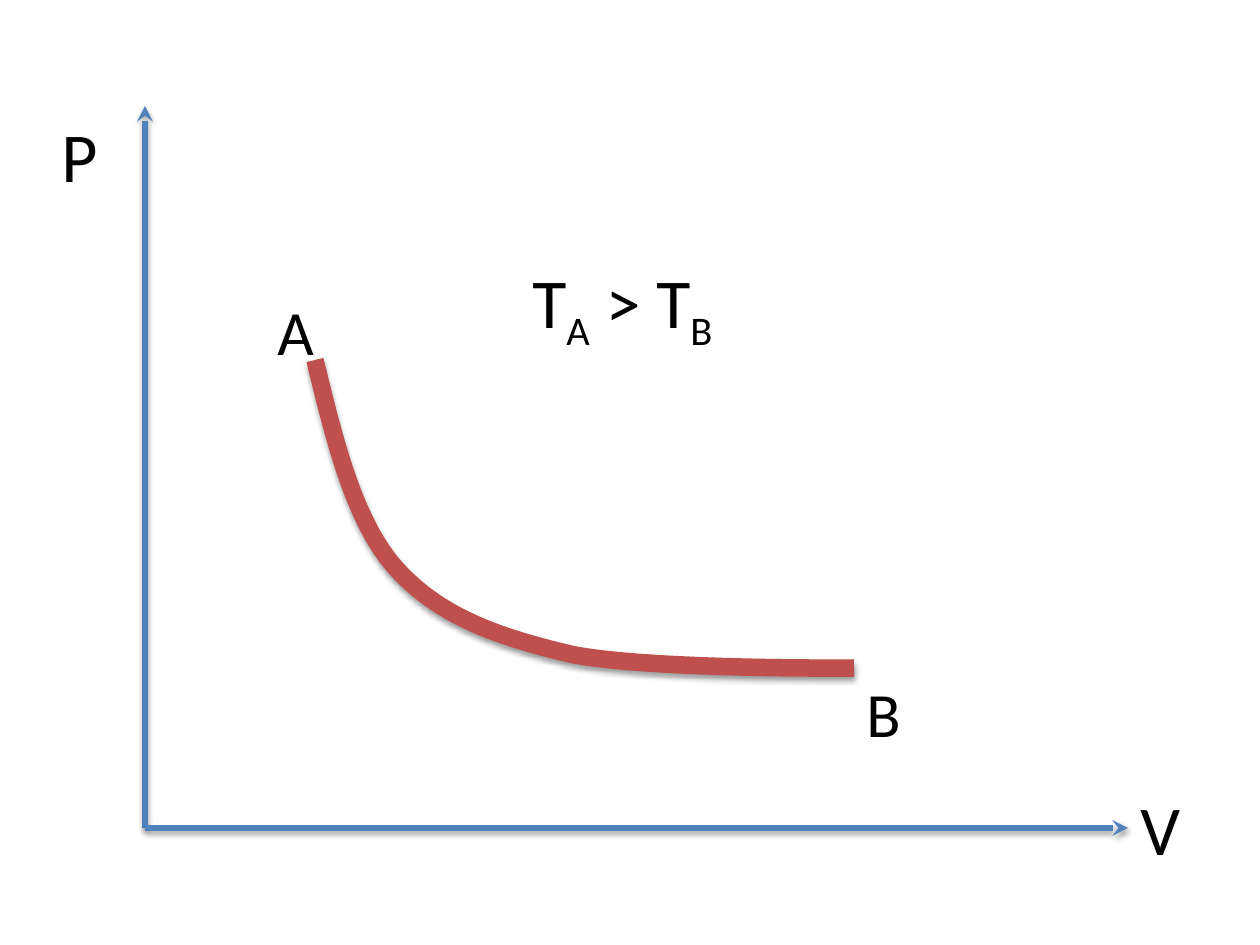
"""Draw a pressure-volume diagram with a curve from A to B."""
from typing import NamedTuple

from lxml.etree import SubElement
from pptx import Presentation
from pptx.dml.color import RGBColor
from pptx.enum.shapes import MSO_CONNECTOR
from pptx.oxml.ns import qn
from pptx.util import Emu, Pt

PX = 914400 / 126
BLUE, RED, BLACK = "4F81BD", "C0504D", "000000"


class Point(NamedTuple):
    x: int
    y: int


class Bezier(NamedTuple):
    c1: Point
    c2: Point
    end: Point


class Label(NamedTuple):
    text: str
    x: int
    y: int
    w: int
    h: int
    size: int


ORIGIN = Point(145, 828)
AXIS_ENDS = [Point(145, 106), Point(1128, 828)]
AXIS_LABELS = [Label("V", 1128, 779, 118, 97, 40), Label("P", 49, 106, 95, 97, 40)]
POINT_LABELS = [Label("A", 265, 286, 91, 89, 36), Label("B", 854, 668, 202, 89, 36)]
FORMULA = Label("T_A_ > T_B_", 520, 252, 378, 97, 40)
CURVE_START = Point(315, 360)
CURVE = [
    Bezier(Point(334, 438), Point(353, 518), Point(394, 566)),
    Bezier(Point(437, 615), Point(494, 636), Point(570, 654)),
    Bezier(Point(646, 670), Point(854, 668), Point(854, 668)),
]


def px(n: int) -> Emu:
    return Emu(round(n * PX))


def rgb(color: str) -> RGBColor:
    return RGBColor.from_string(color)


def add_label(shapes, label: Label, *, color: str = BLACK, font: str = "Calibri") -> None:
    """Add a text box in which underscores enclose subscripts."""
    tf = shapes.add_textbox(*map(px, label[1:5])).text_frame
    tf.word_wrap = True
    p = tf.paragraphs[0]
    for i, part in enumerate(label.text.split("_")):
        if not part:
            continue
        r = p.add_run()
        r.text = part
        r.font.name, r.font.size = font, Pt(label.size)
        r.font.color.rgb = rgb(color)
        if i % 2:
            r.font._element.set("baseline", "-25000")


def style_line(sp, color: str, width: int, arrow: bool = False) -> None:
    """Format the line with a soft shadow below it."""
    sp.line.color.rgb = rgb(color)
    sp.line.width = Pt(width)
    spPr = sp._element.spPr
    if arrow:
        SubElement(spPr.find(qn("a:ln")), qn("a:tailEnd"), type="stealth")
    effects = SubElement(spPr, qn("a:effectLst"))
    shadow = SubElement(effects, qn("a:outerShdw"), blurRad="40000", dist="20000",
                        dir="5400000", rotWithShape="0")
    clr = SubElement(shadow, qn("a:srgbClr"), val=BLACK)
    SubElement(clr, qn("a:alpha"), val="38000")


def add_curve(shapes, start: Point, curve: list[Bezier]) -> None:
    """Build an open outline and bend its segments into Bezier curves."""
    fb = shapes.build_freeform(start.x, start.y, scale=PX)
    fb.add_line_segments([b.end for b in curve], close=False)
    sp = fb.convert_to_shape()
    sp.fill.background()
    for line, bezier in zip(list(sp._element.iter(qn("a:lnTo"))), curve):
        line.tag = qn("a:cubicBezTo")
        line.remove(line[0])
        for pt in bezier:
            SubElement(line, qn("a:pt"), x=str(pt.x - start.x), y=str(pt.y - start.y))
    style_line(sp, RED, 10)


def add_axis(shapes, start: Point, end: Point) -> None:
    cxn = shapes.add_connector(MSO_CONNECTOR.STRAIGHT, *map(px, start + end))
    style_line(cxn, BLUE, 3, arrow=True)


def main() -> None:
    prs = Presentation()
    prs.slide_width, prs.slide_height = px(1260), px(945)
    s = prs.slides.add_slide(prs.slide_layouts[6])
    add_curve(s.shapes, CURVE_START, CURVE)
    for label in [*POINT_LABELS, FORMULA]:
        add_label(s.shapes, label)
    axes = s.shapes.add_group_shape().shapes
    for end in AXIS_ENDS:
        add_axis(axes, ORIGIN, end)
    for label in AXIS_LABELS:
        add_label(axes, label)
    prs.save("out.pptx")


if __name__ == "__main__":
    main()
